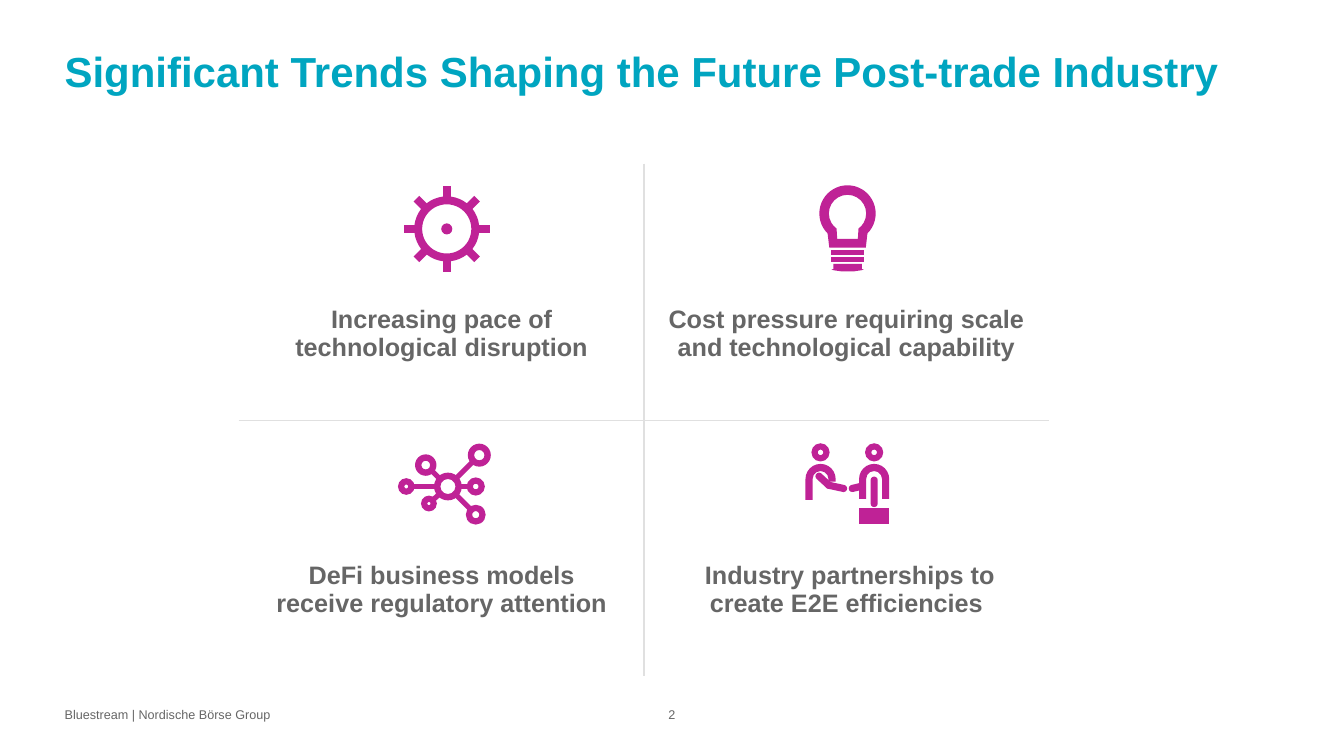
from math import atan2, cos, degrees, radians, sin

from pptx import Presentation
from pptx.dml.color import RGBColor
from pptx.enum.text import PP_ALIGN
from pptx.oxml import parse_xml
from pptx.oxml.ns import nsdecls, qn
from pptx.util import Cm, Pt

# Content (lengths in cm)
NBSP = chr(160)
TITLE = "Significant Trends Shaping the Future Post-trade Industry"
TRENDS = [
    ["Increasing pace of technological disruption",
     "Cost pressure requiring scale and technological capability"],
    [f"DeFi business models receive{NBSP}regulatory attention",
     f"{NBSP}Industry partnerships to create{NBSP}E2E efficiencies"],
]
FOOTER = "Bluestream | Nordische Börse Group"
PAGE = "2"

TEAL, MAGENTA, GREY, RULE = "00A5C0", "BF2296", "666666", "E0E0E0"
TITLE_FONT = {"name": "Arial", "size": Pt(30), "bold": True}
TREND_FONT = {"name": "Arial", "size": Pt(18), "bold": True}
SMALL_FONT = {"name": "Arial", "size": Pt(9), "bold": False}

GRID_X, GRID_Y, COL_W, ROW_H = 6.03, 4.14, 10.2, 6.45
GEAR = (11.26, 5.77)
BULB = (21.36, 5.38)
HUB = (11.29, 12.26, 0.27)
NODES = [(12.08, 11.47, 0.21), (10.73, 11.72, 0.19), (10.24, 12.26, 0.13),
         (10.81, 12.69, 0.12), (11.99, 12.97, 0.17), (11.99, 12.26, 0.15)]
RING_W, LIMB_W = 0.16, 0.18
# Head centre x, where the left and right sides of the body end
PEOPLE = [(20.68, 12.6, 12.14), (22.03, 12.57, 12.57)]
HEAD_Y, SHOULDER_Y = 11.4, 12.07
ARMS = [((20.64, 12.0), (20.89, 12.23)), ((20.89, 12.23), (21.26, 12.31)),
        ((21.48, 12.31), (21.73, 12.25)), ((22.03, 12.1), (22.03, 12.69))]
DESK = (21.66, 12.8, 0.74, 0.41)
BOXES = {"network": (10.03, 11.18, 2.34, 2.03), "gear": (10.18, 4.69, 2.16, 2.16),
         "partners": (20.3, 11.18, 2.12, 2.03), "bulb": (20.65, 4.67, 1.42, 2.17)}

prs = Presentation()
prs.slide_width, prs.slide_height = Cm(33.87), Cm(19.05)
s = prs.slides.add_slide(prs.slide_layouts[6])


def color(hex_value):
    return RGBColor.from_string(hex_value)


def write(tf, text, fmt, hex_value, **paragraph):
    p = tf.paragraphs[0]
    for name, value in paragraph.items():
        setattr(p, name, value)
    r = p.add_run()
    r.text = text
    for name, value in fmt.items():
        setattr(r.font, name, value)
    r.font.color.rgb = color(hex_value)


def text_box(box, insets, *args, **paragraph):
    tf = s.shapes.add_textbox(*map(Cm, box)).text_frame
    tf.word_wrap = True
    tf.margin_left, tf.margin_top, tf.margin_right, tf.margin_bottom = map(Cm, insets)
    write(tf, *args, **paragraph)


# Outlines: a contour lists points (x, y) and arcs (radius, start, sweep)
def polar(x, y, radius, angle):
    a = radians(angle)
    return x + radius * cos(a), y + radius * sin(a)


def circle(x, y, radius, turn=180):
    return [(x + radius, y), (radius, 0, turn), (radius, 180, turn)]


def ring(x, y, radius, width=RING_W):
    return [circle(x, y, radius + width / 2), circle(x, y, radius - width / 2, -180)]


def polygon(*points):
    return [list(points)]


def rect(x, y, w, h):
    return polygon((x, y), (x + w, y), (x + w, y + h), (x, y + h))


def bar(start, end, width, rounded=False):
    a = degrees(atan2(end[1] - start[1], end[0] - start[0]))
    half = width / 2
    cap_end, cap_start = [], []
    if rounded:
        cap_end, cap_start = [(half, a - 90, 180)], [(half, a + 90, 180)]
    return [[polar(*start, half, a - 90), polar(*end, half, a - 90), *cap_end,
             polar(*end, half, a + 90), polar(*start, half, a + 90), *cap_start]]


def body(x, left_end, right_end):
    y, outer, inner = SHOULDER_Y, 0.38, 0.2
    return [[(x - outer, left_end), (x - outer, y), (outer, 180, 180),
             (x + outer, right_end), (x + inner, right_end), (x + inner, y),
             (inner, 0, -180), (x - inner, left_end)]]


def contour_xml(contour, left, top):
    out = ""
    for i, step in enumerate(contour):
        if len(step) == 3:
            radius, start, sweep = step
            out += (f'<a:arcTo wR="{Cm(radius)}" hR="{Cm(radius)}" '
                    f'stAng="{round(start % 360 * 60000)}" swAng="{sweep * 60000}"/>')
        else:
            tag = "lnTo" if i else "moveTo"
            out += (f'<a:{tag}><a:pt x="{Cm(step[0] - left)}" '
                    f'y="{Cm(step[1] - top)}"/></a:{tag}>')
    return out + "<a:close/>"


def add_icon(box, parts):
    left, top, w, h = box
    fb = s.shapes.build_freeform(Cm(left), Cm(top), scale=1.0)
    fb.add_line_segments([(Cm(x), Cm(y)) for x, y in rect(*box)[0][1:]])
    sp = fb.convert_to_shape()
    sp.shadow.inherit = False
    sp.fill.solid()
    sp.fill.fore_color.rgb = color(MAGENTA)
    sp.line.fill.background()
    drawn = "".join(
        f'<a:path w="{Cm(w)}" h="{Cm(h)}">'
        + "".join(contour_xml(c, left, top) for c in part) + "</a:path>"
        for part in parts)
    geom = sp._element.spPr.find(qn("a:custGeom"))
    geom.replace(geom.find(qn("a:pathLst")),
                 parse_xml(f'<a:pathLst {nsdecls("a")}>{drawn}</a:pathLst>'))


# Title
text_box((1.63, 1.02, 30.61, 2.59), (0, 0, 0, 0), TITLE, TITLE_FONT, TEAL,
         line_spacing=1.1)

# Trend grid with inner rules only
tbl = s.shapes.add_table(2, 2, Cm(GRID_X), Cm(GRID_Y),
                         Cm(2 * COL_W), Cm(2 * ROW_H)).table
tbl.first_row = tbl.horz_banding = False
for i, row in enumerate(TRENDS):
    tbl.rows[i].height, tbl.columns[i].width = Cm(ROW_H), Cm(COL_W)
    for j, text in enumerate(row):
        cell = tbl.cell(i, j)
        cell.margin_top = Cm(3.56)
        cell.fill.background()
        write(cell.text_frame, text, TREND_FONT, GREY,
              alignment=PP_ALIGN.CENTER, space_after=Pt(6))
        for k, side in enumerate(("R" if j == 0 else "L", "B" if i == 0 else "T")):
            cell._tc.get_or_add_tcPr().insert(k, parse_xml(
                f'<a:ln{side} {nsdecls("a")} w="12700"><a:solidFill>'
                f'<a:srgbClr val="{RULE}"/></a:solidFill></a:ln{side}>'))

# Network
hx, hy, hub_r = HUB
network = [ring(*HUB)]
for x, y, radius in NODES:
    angle = degrees(atan2(y - hy, x - hx))
    network += [ring(x, y, radius),
                bar(polar(hx, hy, hub_r, angle), polar(x, y, -radius, angle), 0.13)]
add_icon(BOXES["network"], network)

# Gear
teeth = [bar(polar(*GEAR, 0.8, a), polar(*GEAR, 1.08, a), 0.2)
         for a in range(0, 360, 45)]
add_icon(BOXES["gear"], [ring(*GEAR, 0.72, 0.2), [circle(*GEAR, 0.14)], *teeth])

# Partners
partners = [rect(*DESK)]
for person in PEOPLE:
    partners += [ring(person[0], HEAD_Y, 0.15), body(*person)]
partners += [bar(*arm, LIMB_W, rounded=True) for arm in ARMS]
add_icon(BOXES["partners"], partners)

# Light bulb
bx, by = BULB
glass = [[polar(bx, by, radius, 90 + gap), (radius, 90 + gap, 360 - 2 * gap),
          (bx + w, by + h), (bx - w, by + h)]
         for radius, gap, w, h in ((0.71, 45, 0.46, 0.86), (0.47, 36, 0.26, 0.64))]
stripes = [rect(bx - 0.41, y, 0.82, 0.12) for y in (6.3, 6.48)]
foot = [(0.36, 6.65), (0.36, 6.78), (0.41, 6.78), (0.36, 6.81), (0.15, 6.84)]
base = polygon(*[(bx + dx, y) for dx, y in foot],
               *[(bx - dx, y) for dx, y in reversed(foot)])
add_icon(BOXES["bulb"], [glass, *stripes, base])

# Footer and page number
text_box((1.63, 17.73, 6.91, 0.61), (0, 0.13, 0.25, 0.13), FOOTER, SMALL_FONT, GREY,
         line_spacing=0.9, space_after=Pt(6))
text_box((16.13, 17.73, 1.6, 0.61), (0.25, 0.13, 0.25, 0.13), PAGE, SMALL_FONT, GREY,
         alignment=PP_ALIGN.CENTER, line_spacing=0.9, space_after=Pt(6))

prs.save("out.pptx")
